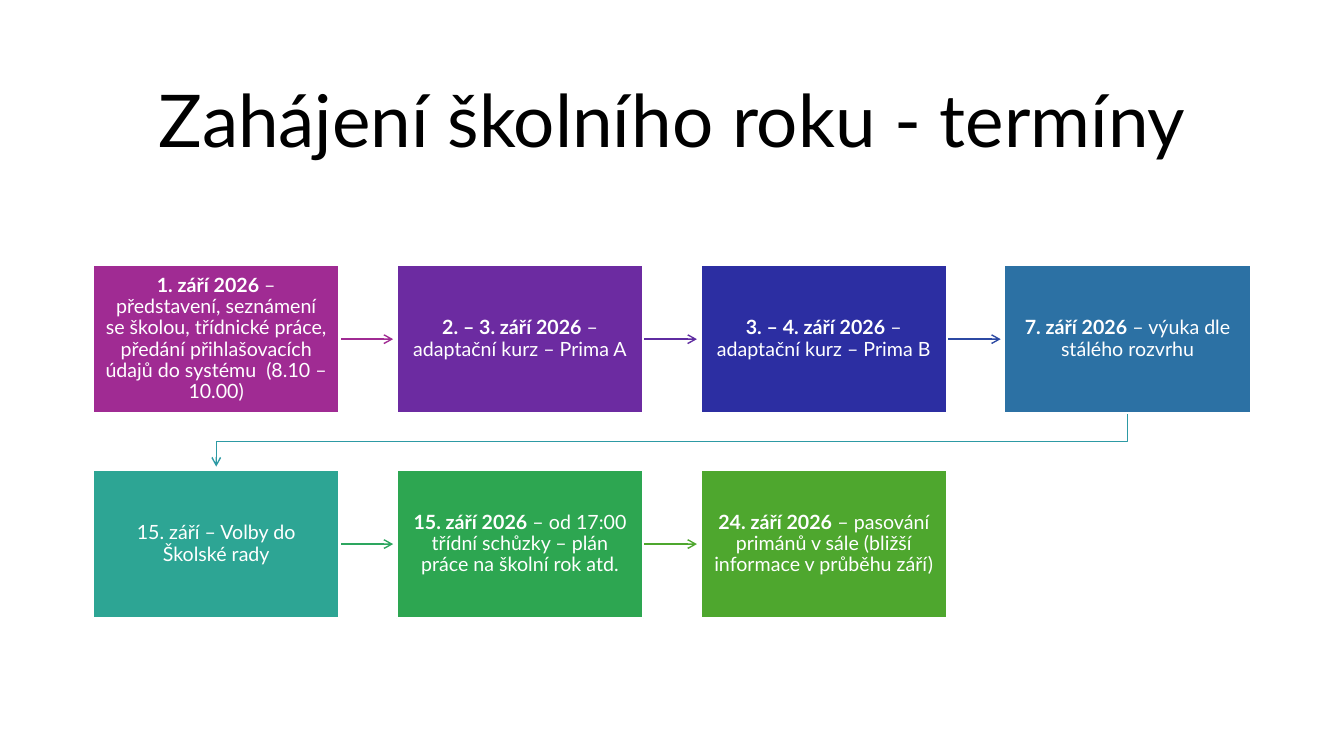
from dataclasses import dataclass

from lxml import etree
from pptx import Presentation
from pptx.dml.color import RGBColor
from pptx.enum.shapes import MSO_CONNECTOR, MSO_SHAPE
from pptx.enum.text import MSO_ANCHOR, PP_ALIGN
from pptx.oxml.ns import qn
from pptx.util import Pt

RECT = MSO_SHAPE.RECTANGLE
STRAIGHT = MSO_CONNECTOR.STRAIGHT
MIDDLE = MSO_ANCHOR.MIDDLE
CENTER = PP_ALIGN.CENTER


@dataclass(frozen=True)
class Theme:
    font: str = "Lato"
    head: int = 52
    body: int = 14
    black: str = "000000"
    white: str = "FFFFFF"
    fills: tuple = ("A02B93", "6C2BA1", "2C2EA2", "2C71A4",
                    "2DA594", "2DA651", "4EA72E")
    lines: tuple = ("A02B93", "5F2CA1", "2C49A3", "2D9AA4",
                    "2DA65F", "4EA72E")


theme = Theme()


def write(shape, text, lead="", size=theme.body, color=theme.white, pad=(8.6, 9.4)):
    """Fill a shape with one centred paragraph whose lead is bold."""
    frame = shape.text_frame
    frame.word_wrap = True
    frame.vertical_anchor = MIDDLE
    frame.margin_left = frame.margin_right = Pt(pad[0])
    frame.margin_top = frame.margin_bottom = Pt(pad[1])
    para = frame.paragraphs[0]
    para.alignment = CENTER
    para.line_spacing = 0.9
    for part, bold in ((lead, True), (text, False)):
        if part:
            run = para.add_run()
            run.text = part
            run.font.name = theme.font
            run.font.size = Pt(size)
            run.font.bold = bold
            run.font.color.rgb = RGBColor.from_string(color)


def point(shape, color):
    """Style a line as a thin flat arrow."""
    shape.line.color.rgb = RGBColor.from_string(color)
    shape.line.width = Pt(1)
    props = shape._element.spPr
    etree.SubElement(props.find(qn("a:ln")), qn("a:tailEnd"), type="arrow")
    etree.SubElement(props, qn("a:effectLst"))


deck = Presentation()
deck.slide_width, deck.slide_height = Pt(960), Pt(540)
slide = deck.slides.add_slide(deck.slide_layouts[5])
shapes = slide.shapes

title = shapes.title
title.left, title.top, title.width, title.height = Pt(66), Pt(43.9), Pt(828), Pt(89.3)
write(title, "Zahájení školního roku - termíny",
      size=theme.head, color=theme.black, pad=(7.2, 3.6))

dates = [
    ("1. září 2026 ", "– představení, seznámení se školou, třídnické práce, "
     "předání přihlašovacích údajů do systému  (8.10 – 10.00)"),
    ("2. – 3. září 2026 ", "– adaptační kurz – Prima A"),
    ("3. – 4. září 2026", " – adaptační kurz – Prima B"),
    ("7. září 2026", " – výuka dle stálého rozvrhu"),
    ("", "15. září – Volby do Školské rady"),
    ("15. září 2026", " – od 17:00 třídní schůzky – plán práce na školní rok atd."),
    ("24. září 2026", " – pasování primánů V sále (bližší informace v průběhu září)"
     .replace("V sále", "v sále")),
]

COLS = 4
LEFT, TOP = 66.4, 189.4
WIDE, HIGH = 176.2, 105.7
STEP, DROP = 217, 146.4
REACH = 38.2

for i, (lead, text) in enumerate(dates):
    row, col = divmod(i, COLS)
    x, y = LEFT + col * STEP, TOP + row * DROP

    if i < len(dates) - 1:
        if col < COLS - 1:
            mid = Pt(y + HIGH / 2)
            link = shapes.add_connector(
                STRAIGHT, Pt(x + WIDE), mid, Pt(x + WIDE + REACH), mid)
        else:
            start, end = Pt(x + WIDE / 2), Pt(LEFT + WIDE / 2)
            base = y + HIGH
            bend = Pt(base + 20.2)
            path = shapes.build_freeform(start, Pt(base))
            path.add_line_segments(
                [(start, bend), (end, bend), (end, Pt(base + REACH))], close=False)
            link = path.convert_to_shape()
            link.fill.background()
        point(link, theme.lines[i])

    card = shapes.add_shape(RECT, Pt(x), Pt(y), Pt(WIDE), Pt(HIGH))
    card.shadow.inherit = False
    card.fill.solid()
    card.fill.fore_color.rgb = RGBColor.from_string(theme.fills[i])
    card.line.color.rgb = RGBColor.from_string(theme.white)
    card.line.width = Pt(1.5)
    write(card, text, lead=lead)

deck.save("out.pptx")
